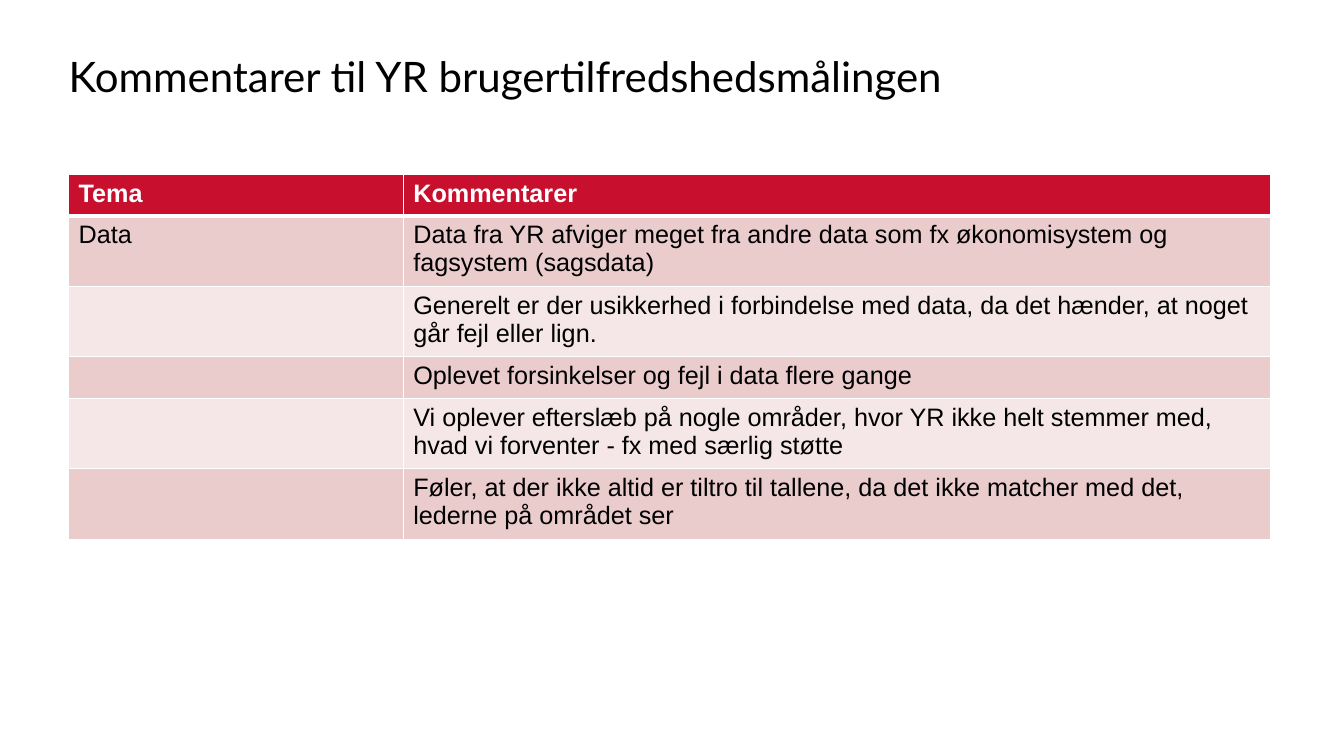
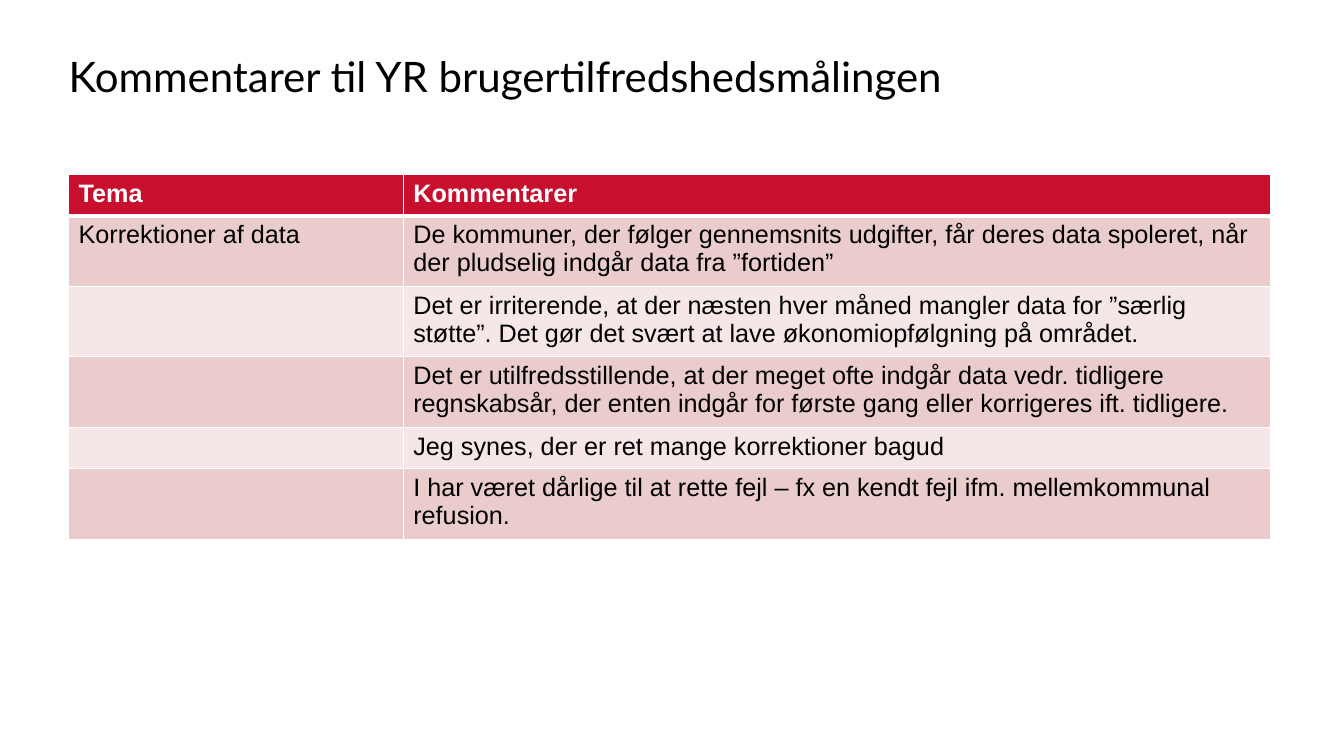
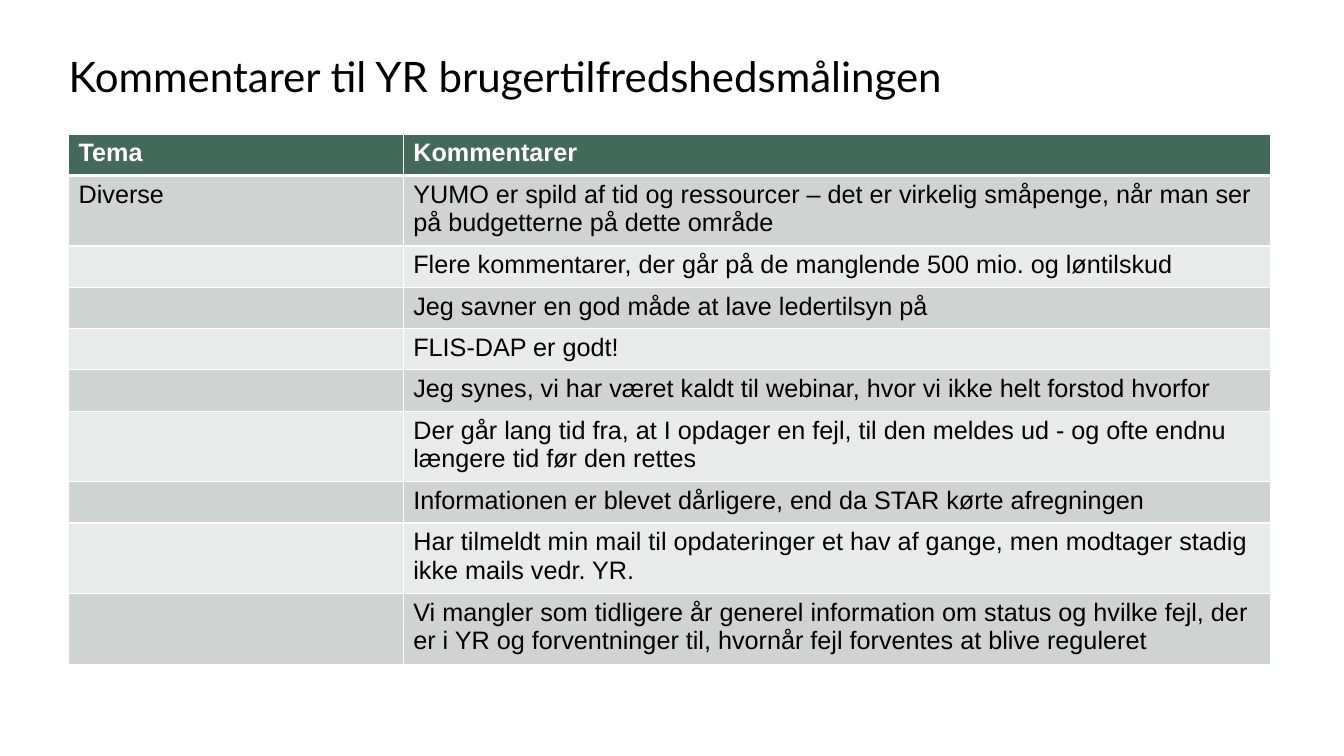
from dataclasses import dataclass

from lxml import etree
from pptx import Presentation
from pptx import util as u
from pptx.dml.color import RGBColor
from pptx.enum import text
from pptx.oxml import ns

BLACK = "000000"
WHITE = "FFFFFF"
TITLE = "Kommentarer til YR brugertilfredshedsmålingen"
HEADINGS = ("Tema", "Kommentarer")
LEFT = 0.68
WIDTH = 11.92
COLUMN_WIDTHS = (3.32, 8.6)
ONE_LINE_HEIGHT = 0.41
TWO_LINE_HEIGHT = 0.7
LINE_CAPACITY = 80


@dataclass(frozen=True)
class Palette:
    header: str
    odd: str
    even: str


@dataclass(frozen=True)
class CommentSlide:
    theme: str
    top: float
    palette: Palette
    comments: tuple[str, ...]


RED = Palette("C8102E", "EBCCCD", "F5E7E8")
GREEN = Palette("43695B", "CFD4D2", "E9EBEA")

SLIDES = (
    CommentSlide("Data", 1.73, RED, (
        "Data fra YR afviger meget fra andre data som fx økonomisystem og fagsystem (sagsdata)",
        "Generelt er der usikkerhed i forbindelse med data, da det hænder, at noget går fejl eller lign.",
        "Oplevet forsinkelser og fejl i data flere gange",
        "Vi oplever efterslæb på nogle områder, hvor YR ikke helt stemmer med, "
        "hvad vi forventer - fx med særlig støtte",
        "Føler, at der ikke altid er tiltro til tallene, da det ikke matcher med det, "
        "lederne på området ser",
    )),
    CommentSlide("Korrektioner af data", 1.73, RED, (
        "De kommuner, der følger gennemsnits udgifter, får deres data spoleret, "
        "når der pludselig indgår data fra ”fortiden”",
        "Det er irriterende, at der næsten hver måned mangler data for ”særlig støtte”. "
        "Det gør det svært at lave økonomiopfølgning på området.",
        "Det er utilfredsstillende, at der meget ofte indgår data vedr. tidligere regnskabsår, "
        "der enten indgår for første gang eller korrigeres ift. tidligere.",
        "Jeg synes, der er ret mange korrektioner bagud",
        "I har været dårlige til at rette fejl – fx en kendt fejl ifm. mellemkommunal refusion.",
    )),
    CommentSlide("Diverse", 1.33, GREEN, (
        "YUMO er spild af tid og ressourcer – det er virkelig småpenge, "
        "når man ser på budgetterne på dette område",
        "Flere kommentarer, der går på de manglende 500 mio. og løntilskud",
        "Jeg savner en god måde at lave ledertilsyn på",
        "FLIS-DAP er godt!",
        "Jeg synes, vi har været kaldt til webinar, hvor vi ikke helt forstod hvorfor",
        "Der går lang tid fra, at I opdager en fejl, til den meldes ud - "
        "og ofte endnu længere tid før den rettes",
        "Informationen er blevet dårligere, end da STAR kørte afregningen",
        "Har tilmeldt min mail til opdateringer et hav af gange, "
        "men modtager stadig ikke mails vedr. YR.",
        "Vi mangler som tidligere år generel information om status og hvilke fejl, "
        "der er i YR og forventninger til, hvornår fejl forventes at blive reguleret",
    )),
)


def color(value: str) -> RGBColor:
    return RGBColor.from_string(value)


def style_font(paragraph, name: str, size: float, hex_color: str, bold: bool = False) -> None:
    font = paragraph.font
    font.name = name
    font.size = u.Pt(size)
    font.bold = bold
    font.color.rgb = color(hex_color)


def add_title(slide) -> None:
    title = slide.shapes.title
    title.left, title.top = u.Inches(LEFT), u.Inches(0.63)
    title.width, title.height = u.Inches(WIDTH), u.Inches(0.92)
    frame = title.text_frame
    frame.text = TITLE
    frame.word_wrap = True
    frame.auto_size = text.MSO_AUTO_SIZE.NONE
    frame.vertical_anchor = text.MSO_ANCHOR.TOP
    frame.margin_left = frame.margin_top = frame.margin_right = frame.margin_bottom = 0
    paragraph = frame.paragraphs[0]
    paragraph.alignment = text.PP_ALIGN.LEFT
    paragraph.line_spacing = u.Pt(27)
    style_font(paragraph, "Lato", 30, BLACK)


def add_borders(cell, top: float, bottom: float) -> None:
    properties = cell._tc.get_or_add_tcPr()
    for side, width in (("L", 1), ("R", 1), ("T", top), ("B", bottom)):
        line = etree.SubElement(properties, ns.qn(f"a:ln{side}"), w=str(u.Pt(width)))
        fill = etree.SubElement(line, ns.qn("a:solidFill"))
        etree.SubElement(fill, ns.qn("a:srgbClr"), val=WHITE)


def fill_cell(cell, content: str, row: int, palette: Palette) -> None:
    is_header = row == 0
    add_borders(cell, top=3 if row == 1 else 1, bottom=3 if is_header else 1)
    background = palette.header if is_header else (palette.even, palette.odd)[row % 2]
    cell.fill.solid()
    cell.fill.fore_color.rgb = color(background)
    cell.margin_left = cell.margin_right = u.Inches(0.1)
    cell.margin_top = cell.margin_bottom = u.Inches(0.05)
    cell.text = content
    style_font(cell.text_frame.paragraphs[0], "Arial", 18,
               WHITE if is_header else BLACK, is_header)


def add_comment_table(slide, content: CommentSlide) -> None:
    themes = (content.theme,) + ("",) * (len(content.comments) - 1)
    rows = (HEADINGS, *zip(themes, content.comments))
    heights = [TWO_LINE_HEIGHT if len(comment) > LINE_CAPACITY else ONE_LINE_HEIGHT
               for _, comment in rows]
    table = slide.shapes.add_table(
        len(rows), len(HEADINGS), u.Inches(LEFT), u.Inches(content.top),
        u.Inches(WIDTH), u.Inches(sum(heights))).table
    table.horz_banding = False
    for column, width in zip(table.columns, COLUMN_WIDTHS):
        column.width = u.Inches(width)
    for row_index, (values, height) in enumerate(zip(rows, heights)):
        table.rows[row_index].height = u.Inches(height)
        for column_index, value in enumerate(values):
            fill_cell(table.cell(row_index, column_index), value, row_index, content.palette)


def main() -> None:
    presentation = Presentation()
    presentation.slide_width = u.Inches(13.33)
    presentation.slide_height = u.Inches(7.5)
    title_only = presentation.slide_layouts[5]
    for content in SLIDES:
        slide = presentation.slides.add_slide(title_only)
        add_title(slide)
        add_comment_table(slide, content)
    presentation.save("out.pptx")


if __name__ == "__main__":
    main()
